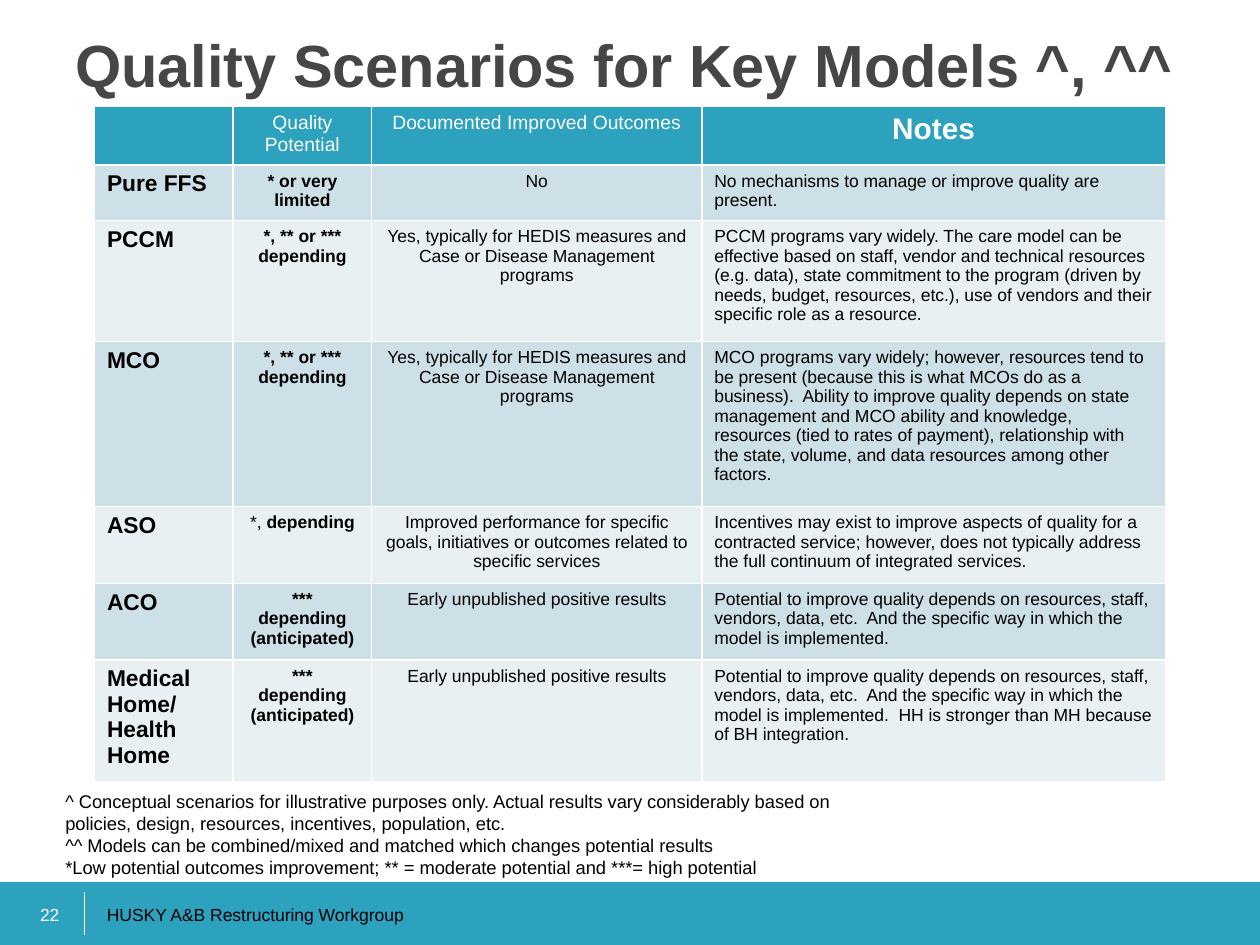
import pptx
import pptx.util
import pptx.dml.color
import pptx.enum.shapes
import pptx.enum.text
import lxml.etree
from pptx.util import Inches

TEAL, WHITE, BLACK, GREY = "2DA2BF", "FFFFFF", "000000", "464646"
BANDS = ["CDE0E8", "E8F0F4"]
ALIGN = pptx.enum.text.PP_ALIGN
ANCHOR = pptx.enum.text.MSO_ANCHOR

COLUMNS = [1.1, 1.1, 2.62, 3.68]
ROW_HEIGHTS = [0.47, 0.44, 0.96, 1.31, 0.61, 0.61, 0.61]
HEADERS = ["", "Quality Potential", "Documented Improved Outcomes", "Notes"]
MANAGED = "Yes, typically for HEDIS measures and Case or Disease Management programs"
EARLY = "Early unpublished positive results"
VARIES = "*, ** or *** depending"
ANTICIPATED = "***\ndepending (anticipated)"
POTENTIAL = (
    "Potential to improve quality depends on resources, staff, vendors, data, etc.  "
    "And the specific way in which the model is implemented."
)
MODELS = [
    ("Pure FFS", "* or very limited", "No",
     "No mechanisms to manage or improve quality are present."),
    ("PCCM", VARIES, MANAGED,
     "PCCM programs vary widely. The care model can be effective based on staff, vendor and "
     "technical resources (e.g. data), state commitment to the program (driven by needs, budget, "
     "resources, etc.), use of vendors and their specific role as a resource."),
    ("MCO", VARIES, MANAGED,
     "MCO programs vary widely; however, resources tend to be present (because this is what MCOs "
     "do as a business).  Ability to improve quality depends on state management and MCO ability "
     "and knowledge, resources (tied to rates of payment), relationship with the state, volume, "
     "and data resources among other factors."),
    ("ASO", "*, depending",
     "Improved performance for specific goals, initiatives or outcomes related to specific services",
     "Incentives may exist to improve aspects of quality for a contracted service; however, does "
     "not typically address the full continuum of integrated services."),
    ("ACO", ANTICIPATED, EARLY, POTENTIAL),
    ("Medical Home/\nHealth Home", ANTICIPATED, EARLY,
     POTENTIAL + "  HH is stronger than MH because of BH integration."),
]
FOOTNOTES = (
    "^ Conceptual scenarios for illustrative purposes only. Actual results vary considerably "
    "based on policies, design, resources, incentives, population, etc.\n"
    "^^ Models can be combined/mixed and matched which changes potential results\n"
    "*Low potential outcomes improvement; ** = moderate potential and ***= high potential"
)


def color(value):
    """Return the colour for a hex string."""
    return pptx.dml.color.RGBColor.from_string(value)


def write(frame, text, size=10, fill=BLACK, bold=False, align=ALIGN.LEFT, plain=""):
    """Write text into a frame, leaving the prefix given as plain not bold."""
    for index, line in enumerate(text.split("\n")):
        paragraph = frame.add_paragraph() if index else frame.paragraphs[0]
        paragraph.alignment = align
        parts = [(plain, False), (line.removeprefix(plain), bold)]
        for part, weight in parts:
            if part:
                run = paragraph.add_run()
                run.text = part
                run.font.name = "Arial"
                run.font.size = pptx.util.Pt(size)
                run.font.bold = weight
                run.font.color.rgb = color(fill)


def add_text(slide, box, text, anchor=ANCHOR.TOP, **style):
    """Add a wrapping text box."""
    shape = slide.shapes.add_textbox(*map(Inches, box))
    shape.text_frame.word_wrap = True
    shape.text_frame.vertical_anchor = anchor
    write(shape.text_frame, text, **style)


def add_models_table(slide, left, top):
    """Add the table that compares the care models."""
    table = slide.shapes.add_table(
        len(ROW_HEIGHTS), len(COLUMNS), Inches(left), Inches(top),
        Inches(sum(COLUMNS)), Inches(sum(ROW_HEIGHTS))).table
    for column, width in zip(table.columns, COLUMNS):
        column.width = Inches(width)
    for row, height in zip(table.rows, ROW_HEIGHTS):
        row.height = Inches(height)
    column_styles = [
        dict(size=13, bold=True),
        dict(bold=True, align=ALIGN.CENTER),
        dict(align=ALIGN.CENTER),
        dict(),
    ]
    for row_index, texts in enumerate([HEADERS, *MODELS]):
        for column_index, text in enumerate(texts):
            cell = table.cell(row_index, column_index)
            cell.fill.solid()
            if row_index == 0:
                cell.fill.fore_color.rgb = color(TEAL)
                notes = text == "Notes"
                style = dict(size=17 if notes else 11, bold=notes, fill=WHITE, align=ALIGN.CENTER)
            else:
                cell.fill.fore_color.rgb = color(BANDS[(row_index - 1) % 2])
                style = dict(column_styles[column_index])
                if text.startswith("*, dep"):
                    style["plain"] = "*, "
            write(cell.text_frame, text, **style)


def add_footer(slide, left, top, width, height):
    """Add the footer band with its page number, divider and group name."""
    band = slide.shapes.add_shape(
        pptx.enum.shapes.MSO_SHAPE.RECTANGLE, *map(Inches, (left, top, width, height)))
    band.shadow.inherit = False
    band.fill.solid()
    band.fill.fore_color.rgb = color(TEAL)
    band.line.fill.background()
    divider_x = Inches(left + 0.67)
    divider = slide.shapes.add_connector(
        pptx.enum.shapes.MSO_CONNECTOR.STRAIGHT,
        divider_x, Inches(top + 0.08), divider_x, Inches(top + height - 0.08))
    divider.line.color.rgb = color(WHITE)
    divider.line.width = pptx.util.Pt(1)
    properties = divider._element.spPr
    lxml.etree.SubElement(properties, pptx.oxml.ns.qn("a:effectLst"))
    add_text(slide, (left + 0.75, top - 0.01, 4.5, 0.4), "HUSKY A&B Restructuring Workgroup",
             anchor=ANCHOR.BOTTOM)
    add_text(slide, (left + 0.17, top - 0.01, 0.4, 0.4), "22",
             anchor=ANCHOR.BOTTOM, fill=WHITE, align=ALIGN.RIGHT)


def main():
    """Build and save the slide."""
    presentation = pptx.Presentation()
    presentation.slide_width, presentation.slide_height = Inches(10), Inches(7.5)
    slide = presentation.slides.add_slide(presentation.slide_layouts[6])
    add_footer(slide, 0, 7, 10, 0.5)
    add_models_table(slide, 0.75, 0.84)
    add_text(slide, (0.5, 0.17, 9, 1.25), "Quality Scenarios for Key Models ^, ^^",
             size=34, fill=GREY, bold=True)
    add_text(slide, (0.42, 6.22, 6.58, 0.81), FOOTNOTES, size=10.5)
    presentation.save("out.pptx")


if __name__ == "__main__":
    main()
